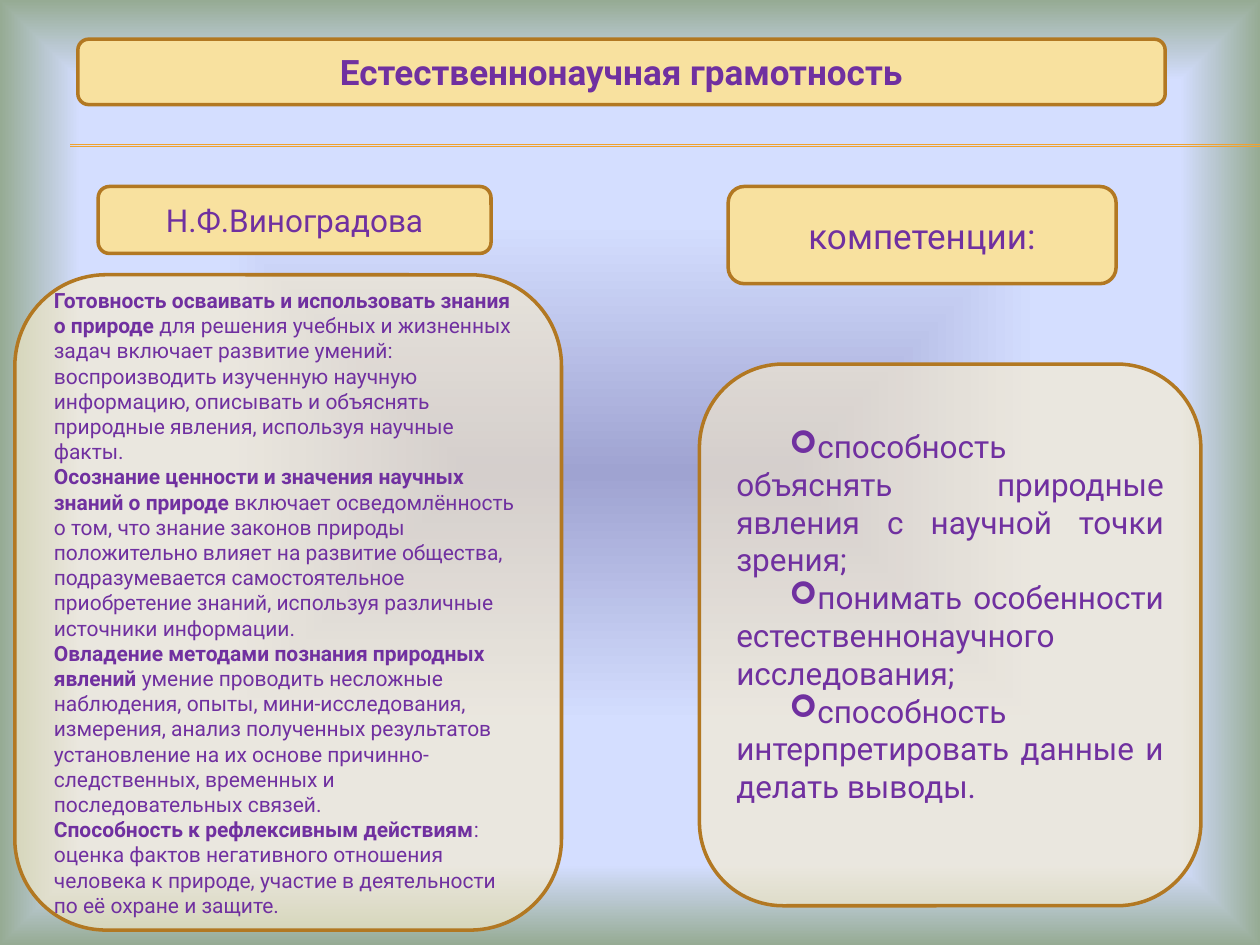
"""Build a slide on natural science literacy: its definition and competencies."""
from lxml.etree import SubElement
from pptx import Presentation
from pptx.dml.color import RGBColor as Rgb
from pptx.enum.shapes import MSO_CONNECTOR as Connector, MSO_SHAPE as Shape
from pptx.enum.text import MSO_ANCHOR as Anchor, PP_ALIGN as Align
from pptx.oxml import parse_xml
from pptx.oxml.ns import nsdecls, qn
from pptx.util import Cm, Pt

COLORS = {
    "text": "7030A0", "border": "B27822", "label": "F8E19F", "panel": "FBEEC9",
    "rule": "F0A22E", "core": "9FA3D1", "sky": "D4DEFF", "edge": "96AB94",
}
PANEL_OPACITY = 59

deck = Presentation()
deck.slide_width, deck.slide_height = Cm(25.4), Cm(19.05)
slide = deck.slides.add_slide(deck.slide_layouts[6])

stops = "".join(
    f'<a:gs pos="{percent * 1000}"><a:srgbClr val="{COLORS[tone]}"/></a:gs>'
    for percent, tone in [(0, "core"), (53, "sky"), (83, "sky"), (100, "edge")]
)
backdrop = parse_xml(
    f'<p:bg {nsdecls("p", "a")}><p:bgPr><a:gradFill rotWithShape="1"><a:gsLst>{stops}</a:gsLst>'
    '<a:path path="shape"><a:fillToRect l="50000" t="50000" r="50000" b="50000"/></a:path>'
    "</a:gradFill><a:effectLst/></p:bgPr></p:bg>"
)
slide.element.cSld.insert(0, backdrop)

for height in (2.92, 2.95):
    rule = slide.shapes.add_connector(
        Connector.STRAIGHT, Cm(1.42), Cm(height), Cm(25.4), Cm(height))
    rule.line.color.rgb = Rgb.from_string(COLORS["rule"])
    rule.line.width = Pt(0.75)
    SubElement(rule._element.spPr, qn("a:effectLst"))


def add_card(box, tone, paragraphs, size, align, bold=False):
    card = slide.shapes.add_shape(Shape.ROUNDED_RECTANGLE, *map(Cm, box))
    card.shadow.inherit = False
    card.fill.solid()
    card.fill.fore_color.rgb = Rgb.from_string(COLORS[tone])
    card.line.color.rgb = Rgb.from_string(COLORS["border"])
    card.line.width = Pt(2)
    frame = card.text_frame
    for name, value in {"word_wrap": True, "vertical_anchor": Anchor.MIDDLE}.items():
        setattr(frame, name, value)
    for index, (lead, rest) in enumerate(paragraphs):
        paragraph = frame.add_paragraph() if index else frame.paragraphs[0]
        paragraph.alignment = align
        for words, strong in ((lead, True), (rest, bold)):
            if words:
                run = paragraph.add_run()
                run.text = words
                run.font.color.rgb = Rgb.from_string(COLORS["text"])
                for name, value in {"name": "Roboto", "size": Pt(size), "bold": strong}.items():
                    setattr(run.font, name, value)
    return card


labels = [
    ((1.57, 0.79, 21.92, 1.32), "Естественнонаучная грамотность", 20, True),
    ((1.98, 3.76, 7.92, 1.35), "Н.Ф.Виноградова", 18, False),
    ((14.68, 3.76, 7.82, 1.96), "компетенции:", 20, False),
]
for box, caption, size, bold in labels:
    add_card(box, "label", [("", caption)], size, Align.CENTER, bold)

definition = [
    ("Готовность осваивать и использовать знания о природе",
     " для решения учебных и жизненных задач включает развитие умений: воспроизводить "
     "изученную научную информацию, описывать и объяснять природные явления, "
     "используя научные факты."),
    ("Осознание ценности и значения научных знаний о природе",
     " включает осведомлённость о том, что знание законов природы положительно влияет "
     "на развитие общества, подразумевается самостоятельное приобретение знаний, "
     "используя различные источники информации."),
    ("Овладение методами познания природных явлений",
     " умение проводить несложные наблюдения, опыты, мини-исследования, измерения, "
     "анализ полученных результатов установление на их основе причинно-следственных, "
     "временных и последовательных связей."),
    ("Способность к рефлексивным действиям",
     ": оценка фактов негативного отношения человека к природе, участие в деятельности "
     "по её охране и защите."),
]
competencies = [
    ("", "способность объяснять природные явления с научной точки зрения;"),
    ("", "понимать особенности естественнонаучного исследования;"),
    ("", "способность интерпретировать данные и делать выводы."),
]
definition_card = add_card((0.3, 5.54, 11.02, 13.21), "panel", definition, 12, Align.LEFT)
skills_card = add_card((14.1, 7.34, 10.11, 10.92), "panel", competencies, 18, Align.JUSTIFY)

for card in (definition_card, skills_card):
    tint = card._element.spPr.find(qn("a:solidFill"))[0]
    SubElement(tint, qn("a:alpha"), val=str(PANEL_OPACITY * 1000))

skills_card.text_frame.margin_bottom = Cm(0.89)
for paragraph in skills_card.text_frame.paragraphs:
    layout = paragraph._p.get_or_add_pPr()
    for name, value in {"marL": 0, "indent": Cm(1.07)}.items():
        layout.set(name, str(value))
    SubElement(layout, qn("a:buFont"), typeface="Wingdings")
    SubElement(layout, qn("a:buChar"), char="➢")

deck.save("out.pptx")
